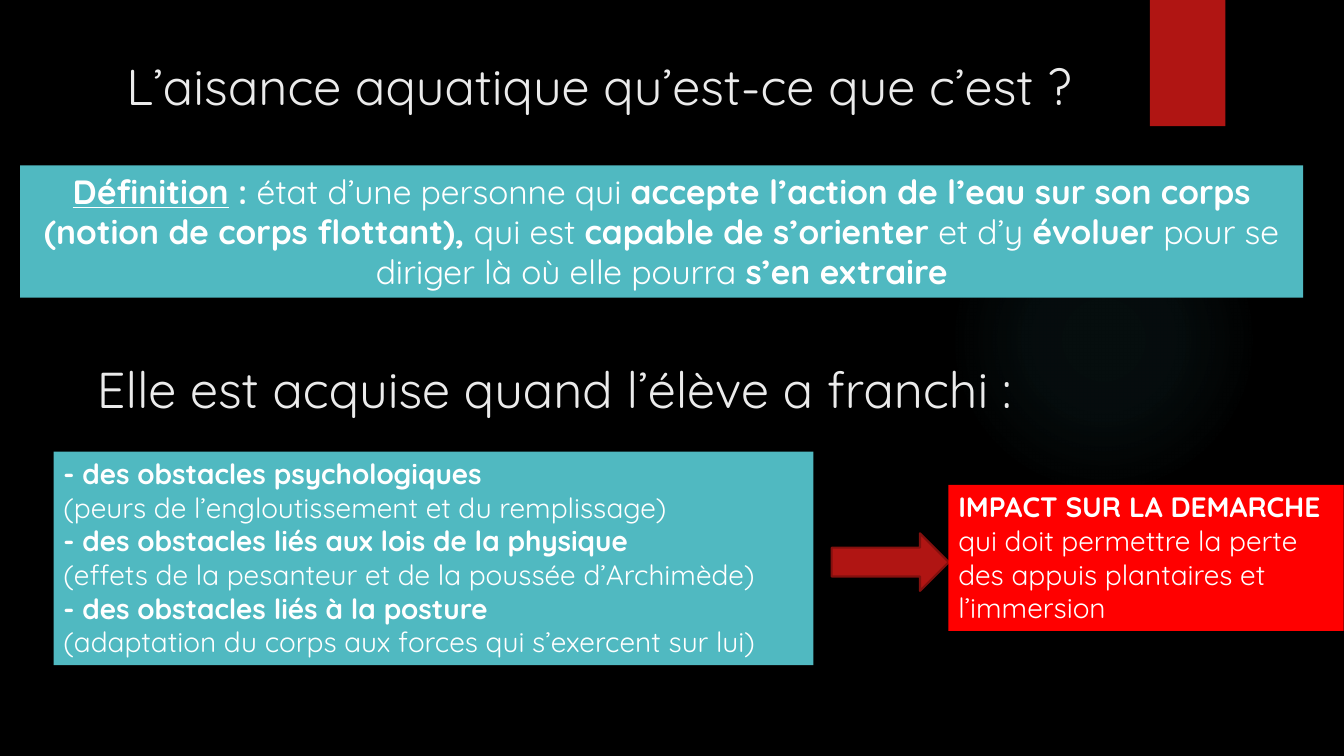
from dataclasses import dataclass

from lxml import etree
from pptx import Presentation
from pptx.dml.color import RGBColor
from pptx.enum.shapes import MSO_SHAPE as Geo
from pptx.enum.text import MSO_ANCHOR as Anchor, PP_ALIGN as Align
from pptx.oxml import parse_xml
from pptx.oxml.ns import nsdecls, qn
from pptx.util import Cm, Pt


@dataclass(frozen=True)
class Theme:
    font: str = "Quicksand"
    background: str = "000000"
    heading: str = "EBEBEB"
    text: str = "FFFFFF"
    teal: str = "50B9C1"
    dark_red: str = "B01513"
    arrow_line: str = "82100E"
    red: str = "FF0000"
    heading_size: int = 36
    definition_size: int = 24
    body_size: int = 20


@dataclass(frozen=True)
class Box:
    left: float
    top: float
    width: float
    height: float

    def lengths(self) -> tuple:
        return Cm(self.left), Cm(self.top), Cm(self.width), Cm(self.height)


@dataclass(frozen=True)
class Span:
    text: str
    bold: bool = False
    underline: bool = False


@dataclass(frozen=True)
class Panel:
    box: Box
    fill: str
    size: int
    align: Align
    paragraphs: list[list[Span]]


T = Theme()


def rgb(value: str) -> RGBColor:
    return RGBColor.from_string(value)


def add_plain(s, geo: Geo, box: Box, fill: str, line: str = ""):
    sp = s.shapes.add_shape(geo, *box.lengths())
    sp.shadow.inherit = False
    sp.fill.solid()
    sp.fill.fore_color.rgb = rgb(fill)
    if line:
        sp.line.color.rgb = rgb(line)
        sp.line.width = Pt(1.5)
    else:
        sp.line.fill.background()
    return sp


def format_paragraph(p, size: int, color: str, align: Align) -> None:
    p.alignment = align
    p.font.name = T.font
    p.font.size = Pt(size)
    p.font.color.rgb = rgb(color)


def write_heading(sp, box: Box, text: str) -> None:
    sp.left, sp.top, sp.width, sp.height = box.lengths()
    tf = sp.text_frame
    tf.word_wrap = True
    tf.vertical_anchor = Anchor.TOP
    tf.text = text
    format_paragraph(tf.paragraphs[0], T.heading_size, T.heading, Align.CENTER)


def add_panel(s, panel: Panel) -> None:
    tf = add_plain(s, Geo.RECTANGLE, panel.box, panel.fill).text_frame
    tf.word_wrap = True
    tf.vertical_anchor = Anchor.TOP
    for i, spans in enumerate(panel.paragraphs):
        p = tf.add_paragraph() if i else tf.paragraphs[0]
        format_paragraph(p, panel.size, T.text, panel.align)
        for span in spans:
            r = p.add_run()
            r.text = span.text
            r.font.bold = span.bold
            r.font.underline = span.underline


def add_glow(s, box: Box, color: str, stops: list[tuple[int, int]]) -> None:
    """Circle fading outwards; stops are (position, opacity) in percent."""
    sp = add_plain(s, Geo.OVAL, box, color)
    grad = parse_xml(f'<a:gradFill {nsdecls("a")}><a:gsLst/><a:path path="circle">'
                     '<a:fillToRect l="50000" t="50000" r="50000" b="50000"/>'
                     '</a:path></a:gradFill>')
    for position, opacity in stops:
        gs = etree.SubElement(grad[0], qn("a:gs"), pos=str(position * 1000))
        clr = etree.SubElement(gs, qn("a:srgbClr"), val=color)
        etree.SubElement(clr, qn("a:alpha"), val=str(opacity * 1000))
    spPr = sp._element.spPr
    spPr.replace(spPr.find(qn("a:solidFill")), grad)


DEFINITION = Panel(Box(0.51, 4.17, 32.33, 3.33), T.teal, T.definition_size, Align.CENTER, [[
    Span("Définition", bold=True, underline=True),
    Span(" : ", bold=True),
    Span("état d’une personne qui "),
    Span("accepte l’action de l’eau sur son corps (notion de corps flottant), ", bold=True),
    Span("qui est "),
    Span("capable de s’orienter ", bold=True),
    Span("et d’y "),
    Span("évoluer ", bold=True),
    Span("pour se diriger là où elle pourra "),
    Span("s’en extraire", bold=True),
]])

OBSTACLES = Panel(Box(1.35, 11.38, 19.15, 5.38), T.teal, T.body_size, Align.LEFT, [
    [Span("- des obstacles psychologiques", bold=True)],
    [Span("(peurs de l’engloutissement et du remplissage)")],
    [Span("- des obstacles liés aux lois de la physique", bold=True)],
    [Span("(effets de la pesanteur et de la poussée d’Archimède)")],
    [Span("- des obstacles liés à la posture", bold=True)],
    [Span("(adaptation du corps aux forces qui s’exercent sur lui)")],
])

IMPACT = Panel(Box(23.9, 12.22, 9.96, 3.68), T.red, T.body_size, Align.LEFT, [[
    Span("IMPACT SUR LA DEMARCHE ", bold=True),
    Span("qui doit permettre la perte des appuis plantaires et l’immersion"),
]])


def main() -> None:
    prs = Presentation()
    prs.slide_width, prs.slide_height = Cm(33.87), Cm(19.05)
    s = prs.slides.add_slide(prs.slide_layouts[5])
    s.background.fill.solid()
    s.background.fill.fore_color.rgb = rgb(T.background)

    # Backdrop: faint glow and red tab
    add_glow(s, Box(23.9, 4.65, 7.82, 7.82), T.teal, [(0, 7), (36, 6), (69, 0)])
    add_plain(s, Geo.RECTANGLE, Box(28.98, 0, 1.9, 3.18), T.dark_red)

    # Title and definition
    write_heading(s.shapes.title, Box(0, 1.27, 30.2, 2.49),
                  "L’aisance aquatique qu’est-ce que c’est ?")
    add_panel(s, DEFINITION)

    # Obstacles leading to the impact
    subtitle_box = Box(0.51, 8.89, 26.92, 2.49)
    write_heading(s.shapes.add_textbox(*subtitle_box.lengths()), subtitle_box,
                  "Elle est acquise quand l’élève a franchi :")
    add_panel(s, OBSTACLES)
    add_plain(s, Geo.RIGHT_ARROW, Box(20.96, 13.44, 2.95, 1.45), T.dark_red, T.arrow_line)
    add_panel(s, IMPACT)

    prs.save("out.pptx")


if __name__ == "__main__":
    main()
